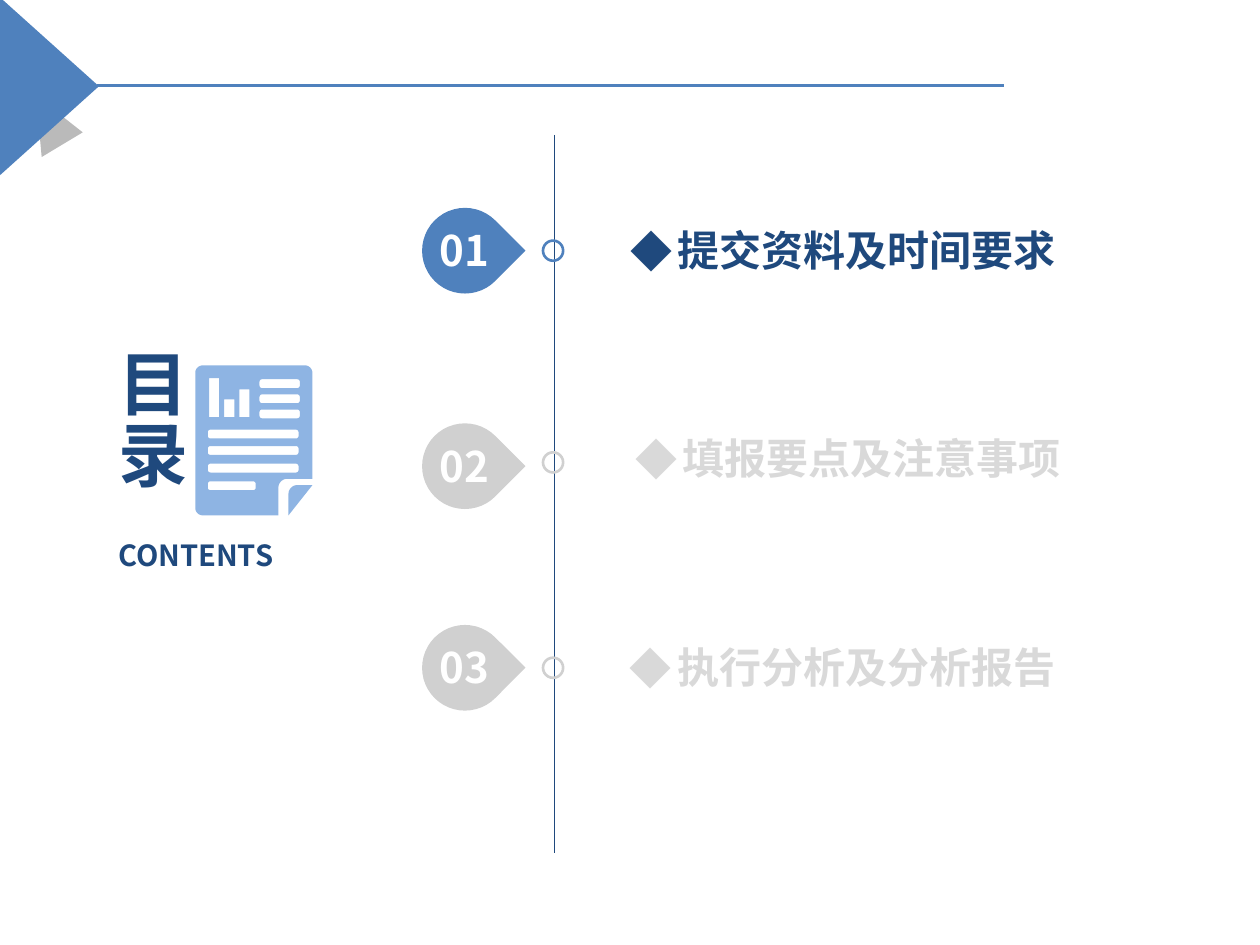
"""Contents slide with three numbered sections, the first one highlighted."""
from dataclasses import dataclass
from math import cos, radians, sin

from lxml import etree
from pptx import Presentation
from pptx.dml.color import RGBColor
from pptx.enum.shapes import MSO_CONNECTOR, MSO_SHAPE
from pptx.enum.text import MSO_ANCHOR, MSO_AUTO_SIZE, PP_ALIGN
from pptx.oxml.ns import qn
from pptx.util import Inches, Pt

TRIANGLE, TEARDROP, OVAL = MSO_SHAPE.ISOSCELES_TRIANGLE, MSO_SHAPE.TEAR, MSO_SHAPE.OVAL
STRAIGHT = MSO_CONNECTOR.STRAIGHT
LEFT, CENTER, JUSTIFY = PP_ALIGN.LEFT, PP_ALIGN.CENTER, PP_ALIGN.JUSTIFY
TOP, MIDDLE, BOTTOM = MSO_ANCHOR.TOP, MSO_ANCHOR.MIDDLE, MSO_ANCHOR.BOTTOM
NO_AUTOFIT = MSO_AUTO_SIZE.NONE


@dataclass(frozen=True)
class Theme:
    font: str = "Noto Sans CJK SC"
    blue: str = "4F81BD"
    navy: str = "1F497D"
    sky: str = "8EB4E3"
    shade: str = "404040"
    gray: str = "D0D0D0"
    muted: str = "D9D9D9"
    white: str = "FFFFFF"
    title: float = 40
    item: float = 24
    caption: float = 16.6


theme = Theme()


def add_shape(kind, box, fill=None, line=None, rotation=0):
    sp = s.shapes.add_shape(kind, *map(Inches, box))
    sp.shadow.inherit = False
    sp.rotation = rotation
    if fill:
        sp.fill.solid()
        sp.fill.fore_color.rgb = RGBColor.from_string(fill)
    else:
        sp.fill.background()
    if line:
        sp.line.color.rgb = RGBColor.from_string(line)
        sp.line.width = Pt(1.5)
    else:
        sp.line.fill.background()
    return sp


def arc(cx, cy, radius, start, turn=90):
    angles = [radians(start + turn * i / 8) for i in range(9)]
    return [(cx + radius * cos(a), cy + radius * sin(a)) for a in angles]


prs = Presentation()
prs.slide_width, prs.slide_height = Inches(10), Inches(7.5)
s = prs.slides.add_slide(prs.slide_layouts[5])

sp = add_shape(TRIANGLE, (0.19, 0.74, 0.38, 0.44), theme.shade, rotation=329)
sp.adjustments[0] = 0.56
color = sp.fill._xPr.find(qn("a:solidFill"))[0]
etree.SubElement(color, qn("a:alpha"), val="36000")
add_shape(TRIANGLE, (-0.32, 0.29, 1.42, 0.79), theme.blue, rotation=90)

for x1, y1, x2, y2, rgb, width in [
    (0.77, 0.68, 7.97, 0.68, theme.blue, 2),
    (4.4, 1.07, 4.4, 6.77, theme.navy, 0.75),
]:
    line = s.shapes.add_connector(STRAIGHT, *map(Inches, (x1, y1, x2, y2)))
    line.line.color.rgb = RGBColor.from_string(rgb)
    line.line.width = Pt(width)
    etree.SubElement(line._element.spPr, qn("a:effectLst"))

title = s.shapes.title
title.left, title.top, title.width, title.height = map(Inches, (0.94, 2.81, 0.49, 1.38))
caption = s.shapes.add_textbox(*map(Inches, (0.94, 4.27, 1.54, 0.27)))
texts = [
    (title, "目录", theme.title, theme.navy, CENTER, TOP, True),
    (caption, "CONTENTS", theme.caption, theme.navy, JUSTIFY, MIDDLE, True),
]

sections = [
    ("提交资料及时间要求", 1.65, 1.91, (5, 1.98, 1.38, 0.2), theme.blue, theme.navy),
    ("填报要点及注意事项", 3.36, 3.59, (5.04, 3.63, 1.38, 0.2), theme.gray, theme.muted),
    ("执行分析及分析报告", 4.96, 5.22, (5, 5.01, 2.04, 0.48), theme.gray, theme.muted),
]
for number, (label, drop_y, ring_y, box, accent, ink) in enumerate(sections, 1):
    add_shape(OVAL, (4.31, ring_y, 0.16, 0.16), line=accent)
    add_shape(TEARDROP, (3.35, drop_y, 0.68, 0.68), accent, rotation=44.9)
    badge = add_shape(OVAL, (3.36, drop_y + 0.01, 0.65, 0.65), accent)
    texts.append((badge, f"{number:02d}", theme.item, theme.white, CENTER, MIDDLE, False))
    item = s.shapes.add_textbox(*map(Inches, box))
    pPr = item.text_frame.paragraphs[0]._p.get_or_add_pPr()
    pPr.set("marL", str(Inches(0.38)))
    pPr.set("indent", str(Inches(-0.38)))
    etree.SubElement(pPr, qn("a:buFont"), typeface=theme.font)
    etree.SubElement(pPr, qn("a:buChar"), char="◆")
    texts.append((item, label, theme.item, ink, LEFT, BOTTOM, False))

for sp, text, size, rgb, align, anchor, wrap in texts:
    tf = sp.text_frame
    tf.margin_left = tf.margin_right = tf.margin_top = tf.margin_bottom = 0
    tf.auto_size = NO_AUTOFIT
    tf.word_wrap = wrap
    tf.vertical_anchor = anchor
    p = tf.paragraphs[0]
    p.text = text
    p.alignment = align
    r = p.runs[0]
    r.font.size, r.font.bold, r.font.name = Pt(size), True, theme.font
    r.font.color.rgb = RGBColor.from_string(rgb)
    etree.SubElement(r.font._element, qn("a:ea"), typeface=theme.font)
title.text_frame.paragraphs[0].line_spacing = 0.84

page = [
    *arc(1.61, 2.96, 0.06, 180), *arc(2.42, 2.96, 0.06, 270), (2.48, 3.8),
    *arc(2.28, 3.87, 0.07, 270, -90), (2.21, 4.09), *arc(1.61, 4.03, 0.06, 90),
]
fold = [(2.48, 3.85), (2.29, 4.09), *arc(2.36, 3.92, 0.07, 180)]
contours = [page, fold]
for left, top, right, bottom in [(1.66, 3, 1.74, 3.31), (1.78, 3.17, 1.86, 3.31), (1.9, 3.09, 1.98, 3.31)]:
    contours.append([(left, top), (right, top), (right, bottom), (left, bottom)])
text_lines = [(2.06, y, 2.38, y + 0.07) for y in (3.01, 3.13, 3.25)]
text_lines += [(1.65, y, 2.37, y + 0.07) for y in (3.41, 3.54, 3.68)]
text_lines.append((1.65, 3.82, 2.03, 3.89))
for left, top, right, bottom in text_lines:
    k = 0.02
    contours.append(
        arc(left + k, top + k, k, 180) + arc(right - k, top + k, k, 270)
        + arc(right - k, bottom - k, k, 0) + arc(left + k, bottom - k, k, 90)
    )

builder = s.shapes.build_freeform(*map(Inches, page[0]))
for i, contour in enumerate(contours):
    points = [(Inches(x), Inches(y)) for x, y in contour]
    if i:
        builder.move_to(*points[0])
    builder.add_line_segments(points[1:], close=True)
icon = builder.convert_to_shape()
icon.shadow.inherit = False
icon.fill.solid()
icon.fill.fore_color.rgb = RGBColor.from_string(theme.sky)
icon.line.fill.background()

prs.save("out.pptx")
